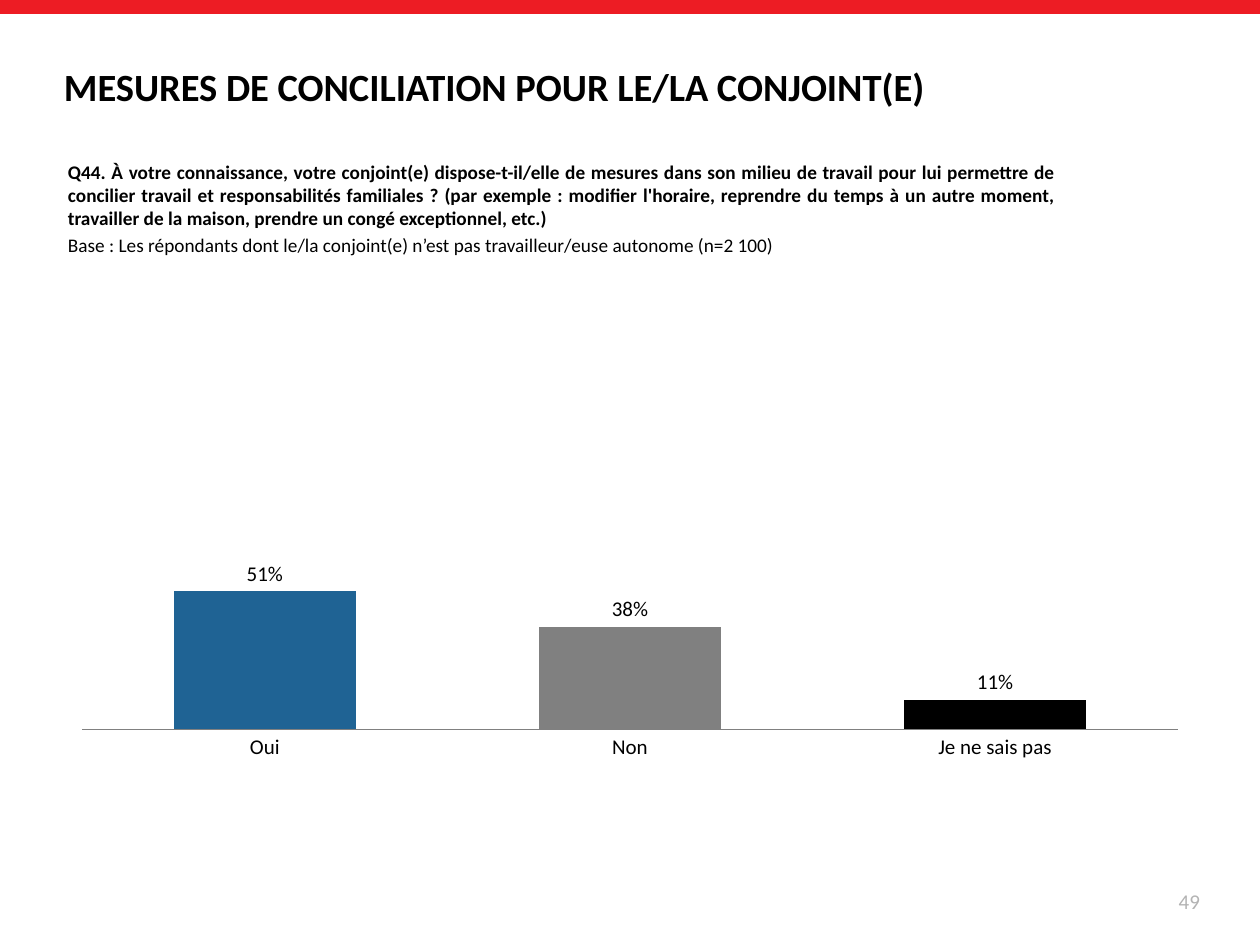
from lxml import etree
from pptx import Presentation
from pptx.chart.data import CategoryChartData
from pptx.dml.color import RGBColor
from pptx.enum.chart import XL_CHART_TYPE, XL_LABEL_POSITION, XL_TICK_MARK
from pptx.enum.shapes import MSO_SHAPE
from pptx.enum.text import MSO_ANCHOR, PP_ALIGN
from pptx.oxml.ns import qn
from pptx.util import Cm, Pt

COLUMN = XL_CHART_TYPE.COLUMN_CLUSTERED
OUTSIDE_END = XL_LABEL_POSITION.OUTSIDE_END
NO_TICK = XL_TICK_MARK.NONE
RECTANGLE = MSO_SHAPE.RECTANGLE
TOP, MIDDLE = MSO_ANCHOR.TOP, MSO_ANCHOR.MIDDLE
LEFT, RIGHT, JUSTIFY = PP_ALIGN.LEFT, PP_ALIGN.RIGHT, PP_ALIGN.JUSTIFY

FONT = "Calibri"
COLORS = {
    "band": "ED1C24",
    "text": "000000",
    "page_number": "B3B3B3",
    "series": "7B0A0E",
    "axis": "808080",
    "yes": "1F6394",
    "no": "808080",
    "unsure": "000000",
}
ANSWERS = [("Oui", 0.51, "yes"), ("Non", 0.38, "no"), ("Je ne sais pas", 0.11, "unsure")]
PLOT_AREA = {"x": 0.017, "y": 0.371, "w": 0.966, "h": 0.44}

TITLE = "MESURES DE CONCILIATION POUR LE/LA CONJOINT(E)"
QUESTION = (
    "Q44. À votre connaissance, votre conjoint(e) dispose-t-il/elle de mesures dans son "
    "milieu de travail pour lui permettre de concilier travail et responsabilités "
    "familiales ? (par exemple : modifier l'horaire, reprendre du temps à un autre moment, "
    "travailler de la maison, prendre un congé exceptionnel, etc.)"
)
BASE = "Base : Les répondants dont le/la conjoint(e) n’est pas travailleur/euse autonome (n=2 100)"


def color(name):
    return RGBColor.from_string(COLORS[name])


def fill_solid(target, name):
    target.fill.solid()
    target.fill.fore_color.rgb = color(name)


def style_font(font, size, name, bold=False):
    font.name = FONT
    font.size = Pt(size)
    font.bold = bold
    font.color.rgb = color(name)


def add_band(page, width):
    band = page.shapes.add_shape(RECTANGLE, 0, 0, width, Cm(0.28))
    band.shadow.inherit = False
    fill_solid(band, "band")
    band.line.fill.background()


def add_text(page, place, lines, size, name="text", align=LEFT, anchor=MIDDLE):
    box = page.shapes.add_textbox(*map(Cm, place))
    frame = box.text_frame
    frame.word_wrap = True
    frame.vertical_anchor = anchor
    for index, (text, bold) in enumerate(lines):
        para = frame.add_paragraph() if index else frame.paragraphs[0]
        para.alignment = align
        if index:
            para.space_before = Pt(size * 0.2)
        span = para.add_run()
        span.text = text
        style_font(span.font, size, name, bold)


def set_plot_layout(chart):
    plot_area = chart._chartSpace.chart.plotArea
    for old in plot_area.findall(qn("c:layout")):
        plot_area.remove(old)
    layout = etree.Element(qn("c:layout"))
    manual = etree.SubElement(layout, qn("c:manualLayout"))
    settings = {"layoutTarget": "inner", "xMode": "edge", "yMode": "edge", **PLOT_AREA}
    for tag, value in settings.items():
        etree.SubElement(manual, qn(f"c:{tag}")).set("val", str(value))
    plot_area.insert(0, layout)


def add_answer_chart(page, place):
    data = CategoryChartData(number_format="0%")
    data.categories = [label for label, _, _ in ANSWERS]
    data.add_series("Series 1", [value for _, value, _ in ANSWERS])
    chart = page.shapes.add_chart(COLUMN, *map(Cm, place), data).chart
    chart.has_legend = False
    chart.has_title = False
    style_font(chart.font, 12, "text")
    set_plot_layout(chart)

    category_axis = chart.category_axis
    category_axis.major_tick_mark = NO_TICK
    category_axis.minor_tick_mark = NO_TICK
    category_axis.format.line.color.rgb = color("axis")
    category_axis.format.line.width = Pt(1)
    value_axis = chart.value_axis
    value_axis.minimum_scale = 0
    value_axis.maximum_scale = 1
    value_axis.has_major_gridlines = False
    value_axis.visible = False

    plot = chart.plots[0]
    plot.gap_width = 100
    plot.vary_by_categories = False
    plot.has_data_labels = True
    labels = plot.data_labels
    labels.show_value = True
    labels.position = OUTSIDE_END
    labels.number_format = "0%"
    labels.number_format_is_linked = False
    series = plot.series[0]
    fill_solid(series.format, "series")
    for index, (_, _, name) in enumerate(ANSWERS):
        fill_solid(series.points[index].format, name)


def main():
    deck = Presentation()
    deck.slide_width, deck.slide_height = Cm(25.4), Cm(19.05)
    page = deck.slides.add_slide(deck.slide_layouts[6])
    add_band(page, deck.slide_width)
    add_answer_chart(page, (1.27, 4.65, 22.86, 12.4))
    add_text(page, (18.52, 17.65, 5.92, 1.02), [("49", False)], 12, "page_number", RIGHT)
    add_text(page, (1.12, 3.1, 20.42, 3), [(QUESTION, True), (BASE, False)], 11,
             align=JUSTIFY, anchor=TOP)
    add_text(page, (1.04, 1.07, 19.46, 1.32), [(TITLE, True)], 22)
    deck.save("out.pptx")


if __name__ == "__main__":
    main()
